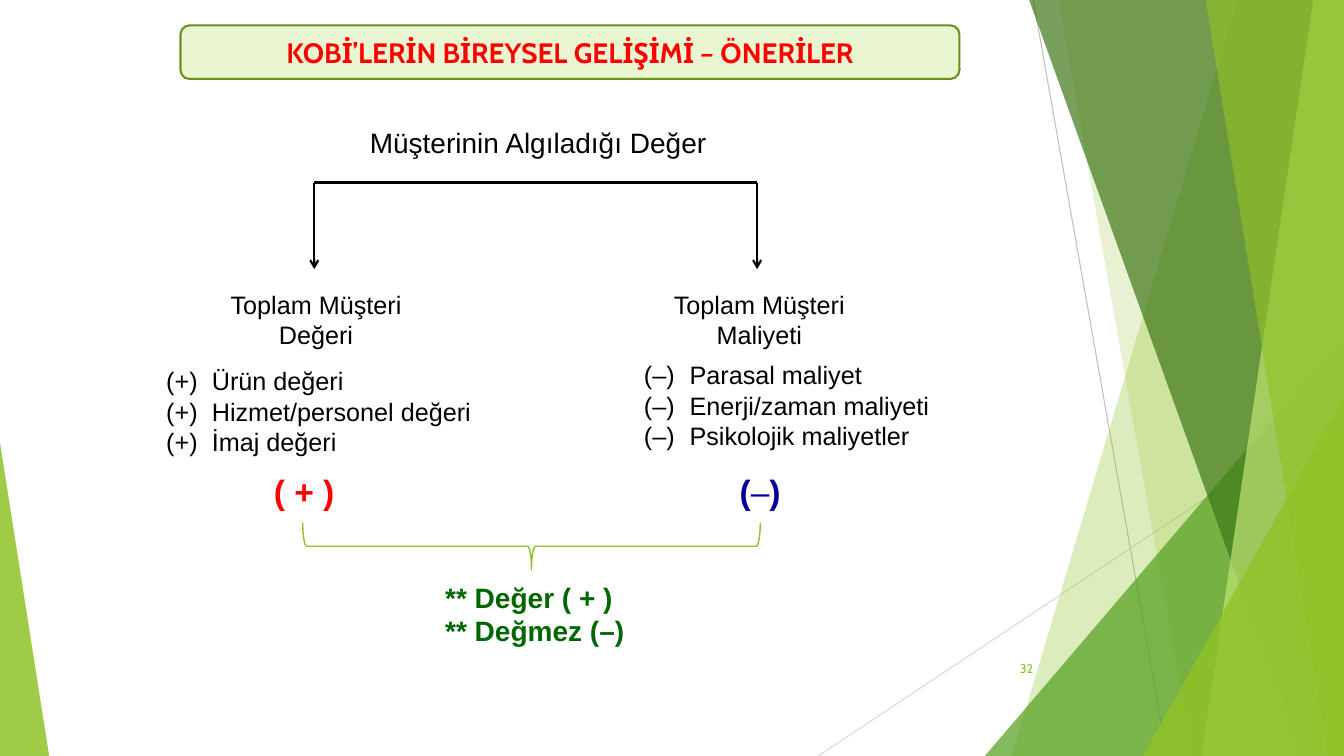
from lxml import etree
from pptx import Presentation
from pptx.dml.color import RGBColor
from pptx.enum import shapes as sh, text as tx
from pptx.oxml.ns import qn
from pptx.util import Cm, Pt

WIDE, HIGH = 33.87, 19.05
GREEN, BLACK = "90C226", "000000"
LEFT, CENTER, RIGHT = tx.PP_ALIGN.LEFT, tx.PP_ALIGN.CENTER, tx.PP_ALIGN.RIGHT


def color(fmt, code):
    fmt.rgb = RGBColor.from_string(code)


def paint(shape, fill=None, alpha=100, line=None, width=1):
    shape.shadow.inherit = False
    if fill:
        shape.fill.solid()
        color(shape.fill.fore_color, fill)
        if alpha < 100:
            tone = shape._element.spPr.find(qn("a:solidFill"))[0]
            etree.SubElement(tone, qn("a:alpha")).set("val", str(alpha * 1000))
    else:
        shape.fill.background()
    if line:
        color(shape.line.color, line)
        shape.line.width = Pt(width)
    else:
        shape.line.fill.background()
    return shape


def write(frame, lines, size=18, font="Arial", ink=BLACK, bold=False,
          align=LEFT, hang=0):
    """Each line is a string, or a list of (string, bold) runs."""
    for i, line in enumerate(lines):
        para = frame.paragraphs[0] if i == 0 else frame.add_paragraph()
        para.alignment = align
        if hang:
            props = para._p.get_or_add_pPr()
            props.set("marL", str(Cm(hang)))
            props.set("indent", str(-Cm(hang)))
        for words, heavy in [(line, bold)] if isinstance(line, str) else line:
            run = para.add_run()
            run.text = words
            run.font.size, run.font.name, run.font.bold = Pt(size), font, heavy
            color(run.font.color, ink)


def label(slide, box, lines, wrap=False, **look):
    frame = slide.shapes.add_textbox(*map(Cm, box)).text_frame
    frame.word_wrap = wrap
    if wrap:
        frame.vertical_anchor = tx.MSO_ANCHOR.MIDDLE
    else:
        frame.auto_size = tx.MSO_AUTO_SIZE.SHAPE_TO_FIT_TEXT
    write(frame, lines, **look)


def line(slide, start, end, ink=BLACK, width=1.5, arrow=False):
    con = slide.shapes.add_connector(
        sh.MSO_CONNECTOR.STRAIGHT, *map(Cm, start + end))
    color(con.line.color, ink)
    con.line.width = Pt(width)
    if arrow:
        ln = con.line._get_or_add_ln()
        etree.SubElement(ln, qn("a:tailEnd")).set("type", "arrow")
    etree.SubElement(con._element.spPr, qn("a:effectLst"))


def band(slide, top, foot, fill, alpha):
    """Pane from a slanted left edge to the right edge of the slide."""
    pen = slide.shapes.build_freeform(Cm(top), Cm(-0.02))
    pen.add_line_segments([(Cm(x), Cm(y)) for x, y in
                           [(WIDE, -0.02), (WIDE, HIGH), (foot, HIGH)]])
    paint(pen.convert_to_shape(), fill, alpha)


def wedge(slide, left, wide, high, tip, fill, alpha):
    """Right-angled triangle standing on the bottom edge."""
    box = map(Cm, (left, HIGH - high, wide, high))
    shape = slide.shapes.add_shape(sh.MSO_SHAPE.ISOSCELES_TRIANGLE, *box)
    shape.adjustments[0] = tip
    paint(shape, fill, alpha)


def backdrop(slide):
    line(slide, (26.04, 0), (29.41, HIGH), "BFBFBF", 0.75)
    line(slide, (WIDE, 10.24), (20.62, HIGH), "D9D9D9", 0.75)
    band(slide, 31.19, 25.5, GREEN, 30)
    band(slide, 26.67, 30.05, GREEN, 20)
    wedge(slide, 24.82, 9.05, 10.59, 1, "54A021", 72)
    band(slide, 25.93, 32.79, "3F7819", 70)
    band(slide, 33.1, 30.28, "C0E474", 70)
    band(slide, 30.38, 33.48, GREEN, 65)
    wedge(slide, 28.8, 5.07, 9.07, 1, GREEN, 80)
    wedge(slide, 0, 1.24, 7.9, 0, GREEN, 85)


def main():
    prs = Presentation()
    prs.slide_width, prs.slide_height = Cm(WIDE), Cm(HIGH)
    slide = prs.slides.add_slide(prs.slide_layouts[6])
    backdrop(slide)
    label(slide, (24.38, 16.33, 1.91, 1.02), ["32"], wrap=True,
          size=9, font="Cabin", ink=GREEN, align=RIGHT)

    # Root and its fork
    label(slide, (9.07, 3.05, 9.07, 1.12), ["Müşterinin Algıladığı Değer"],
          size=20)
    forks = (7.92, 19.08)
    line(slide, (forks[0], 4.6), (forks[1], 4.6))
    for x in forks:
        line(slide, (x, 4.6), (x, 6.78), arrow=True)

    # Branch heads
    for x, word in zip((5.54, 16.71), ("Değeri", "Maliyeti")):
        label(slide, (x, 7.16, 4.85, 1.8), ["Toplam Müşteri", word],
              align=CENTER)

    # Branch items
    lists = [
        ((3.94, 9.09, 8.26, 2.57), "(+)",
         ("Ürün değeri", "Hizmet/personel değeri", "İmaj değeri")),
        ((15.98, 8.94, 7.75, 2.57), "(–)",
         ("Parasal maliyet", "Enerji/zaman maliyeti",
          "Psikolojik maliyetler")),
    ]
    for box, sign, items in lists:
        label(slide, box, [f"{sign}\t{item}" for item in items], hang=1.15)

    # Signs, brace and verdict
    label(slide, (6.65, 11.73, 2.06, 1.3), ["( + )"],
          size=24, ink="FF0000", bold=True)
    label(slide, (18.39, 11.73, 1.55, 1.3),
          [[("(", True), ("–", False), (")", True)]], size=24, ink="000099")
    brace = slide.shapes.add_shape(
        sh.MSO_SHAPE.LEFT_BRACE, Cm(12.8), Cm(8), Cm(1.19), Cm(11.53))
    brace.rotation = 270
    paint(brace, line=GREEN)
    label(slide, (10.97, 14.5, 5.05, 1.96), ["** Değer ( + )", "** Değmez (–)"],
          size=20, ink="006600", bold=True)

    # Title
    title = slide.shapes.add_shape(
        sh.MSO_SHAPE.ROUNDED_RECTANGLE, Cm(4.55), Cm(0.64), Cm(19.63), Cm(1.35))
    paint(title, "EAF6D1", line="6B901C", width=1.5)
    title.text_frame.vertical_anchor = tx.MSO_ANCHOR.MIDDLE
    write(title.text_frame, ["KOBİ’LERİN BİREYSEL GELİŞİMİ – ÖNERİLER"],
          size=20, font="Cabin", ink="FF0000", bold=True, align=CENTER)
    prs.save("out.pptx")


if __name__ == "__main__":
    main()
